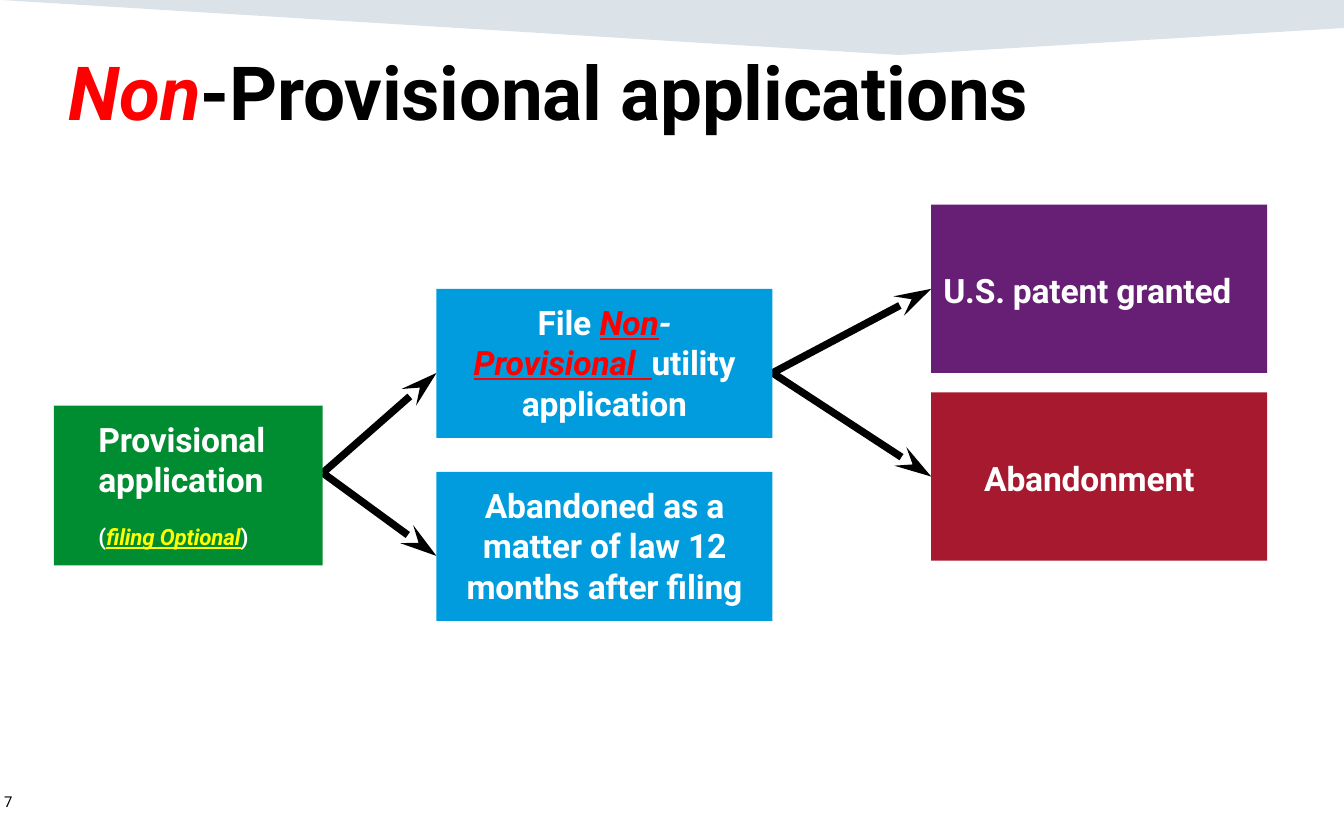
"""Build the slide on non-provisional patent applications."""
from lxml import etree
from pptx import Presentation
from pptx.dml.color import RGBColor
from pptx.enum.shapes import MSO_CONNECTOR, MSO_SHAPE
from pptx.enum.text import MSO_ANCHOR, PP_ALIGN
from pptx.oxml.ns import qn
from pptx.util import Cm, Pt

RECTANGLE, STRAIGHT = MSO_SHAPE.RECTANGLE, MSO_CONNECTOR.STRAIGHT
TOP, MIDDLE = MSO_ANCHOR.TOP, MSO_ANCHOR.MIDDLE
LEFT, CENTER = PP_ALIGN.LEFT, PP_ALIGN.CENTER

FONT = "Roboto"
COLORS = {"black": "000000", "white": "FFFFFF", "red": "FF0000", "yellow": "FFFF00",
          "green": "008C30", "blue": "009CDE", "purple": "671E75",
          "crimson": "A6192E", "navy": "164469"}

SLIDE_SIZE = (25.4, 15.88)
BAND = [(0, 0), (25.4, 0), (25.4, 0.53), (16.99, 1.04)]
TITLE = [[("Non", 40, "red", "bi"), ("-Provisional applications", 40, "black", "b")]]
PAGE_NUMBER = [[("7", 8, "black", "")]]

STAGES = {
    "provisional": dict(
        place=(1.02, 7.67, 5.08, 3.02), fill="green", port=1.27,
        insets=(0.84, 0.25, 0, 0.25), anchor=TOP, align=LEFT,
        text=[[("Provisional application", 18, "white", "b")],
              [("(", 12, "white", "b"), ("filing Optional", 12, "yellow", "biu"),
               (")", 12, "white", "b")]]),
    "filed": dict(
        place=(8.25, 5.46, 6.35, 2.82), fill="blue", port=1.59,
        insets=(0.5, 0.25, 0.5, 0.25), anchor=TOP, align=CENTER,
        text=[[("File ", 18, "white", "b"), ("Non", 18, "red", "biu"),
               ("- ", 18, "white", "bi"), ("Provisional  ", 18, "red", "biu"),
               ("utility application", 18, "white", "b")]]),
    "lapsed": dict(
        place=(8.25, 8.92, 6.35, 2.82), fill="blue", port=1.59,
        insets=(0.33, 0.25, 0.33, 0.25), anchor=TOP, align=CENTER,
        text=[[("Abandoned as a matter of law 12 months after filing", 18, "white", "b")]]),
    "granted": dict(
        place=(17.6, 3.87, 6.35, 3.18), fill="purple", port=1.59,
        insets=(0.23, 0.05, 0, 0), anchor=MIDDLE, align=LEFT,
        text=[[("U.S. patent granted", 18, "white", "b")]]),
    "abandoned": dict(
        place=(17.6, 7.42, 6.35, 3.18), fill="crimson", port=1.59,
        insets=(1, 0.05, 0, 0), anchor=MIDDLE, align=LEFT,
        text=[[("Abandonment", 18, "white", "b")]]),
}
STEPS = [("provisional", "lapsed"), ("provisional", "filed"),
         ("filed", "granted"), ("filed", "abandoned")]


def rgb(name):
    return RGBColor.from_string(COLORS[name])


def paint(shape, color):
    shape.shadow.inherit = False
    shape.fill.solid()
    shape.fill.fore_color.rgb = rgb(color)
    shape.line.fill.background()


def write(shape, paragraphs, insets, anchor=TOP, align=LEFT):
    frame = shape.text_frame
    frame.word_wrap = True
    frame.vertical_anchor = anchor
    frame.margin_left, frame.margin_top, frame.margin_right, frame.margin_bottom = map(Cm, insets)
    for index, pieces in enumerate(paragraphs):
        paragraph = frame.paragraphs[0] if index == 0 else frame.add_paragraph()
        paragraph.alignment = align
        paragraph.space_before = Pt(12.8 if index else 0)
        for words, size, color, style in pieces:
            run = paragraph.add_run()
            run.text = words
            font = run.font
            font.name, font.size, font.color.rgb = FONT, Pt(size), rgb(color)
            font.bold, font.italic, font.underline = (flag in style for flag in "biu")
            if font.bold:
                run._r.get_or_add_rPr().set("spc", "-10")


def add_band(slide):
    outline = slide.shapes.build_freeform(*map(Cm, BAND[0]))
    outline.add_line_segments([(Cm(x), Cm(y)) for x, y in BAND[1:]], close=True)
    band = outline.convert_to_shape()
    paint(band, "navy")
    tint = band._element.spPr.find(qn("a:solidFill"))[0]
    etree.SubElement(tint, qn("a:alpha"), val="15000")


def add_stage(slide, stage):
    box = slide.shapes.add_shape(RECTANGLE, *map(Cm, stage["place"]))
    paint(box, stage["fill"])
    write(box, stage["text"], stage["insets"], stage["anchor"], stage["align"])


def add_step(slide, source, target):
    left, top, width, _ = source["place"]
    end_x, end_top = target["place"][:2]
    arrow = slide.shapes.add_connector(
        STRAIGHT, Cm(left + width), Cm(top + source["port"]),
        Cm(end_x), Cm(end_top + target["port"]))
    arrow.line.width = Pt(3.96)
    arrow.line.color.rgb = rgb("black")
    etree.SubElement(arrow.line._get_or_add_ln(), qn("a:tailEnd"),
                     type="stealth", w="med", len="lg")
    etree.SubElement(arrow._element.spPr, qn("a:effectLst"))


def main():
    deck = Presentation()
    deck.slide_width, deck.slide_height = map(Cm, SLIDE_SIZE)
    slide = deck.slides.add_slide(deck.slide_layouts[6])
    add_band(slide)
    title = slide.shapes.add_textbox(Cm(1.27), Cm(0.86), Cm(22.86), Cm(1.7))
    write(title, TITLE, (0.03, 0, 0, 0))
    page = slide.shapes.add_textbox(Cm(0), Cm(14.71), Cm(5.72), Cm(0.84))
    write(page, PAGE_NUMBER, (0.08, 0.05, 0, 0), MIDDLE)
    for source, target in STEPS:
        add_step(slide, STAGES[source], STAGES[target])
    for stage in STAGES.values():
        add_stage(slide, stage)
    deck.save("out.pptx")


if __name__ == "__main__":
    main()
